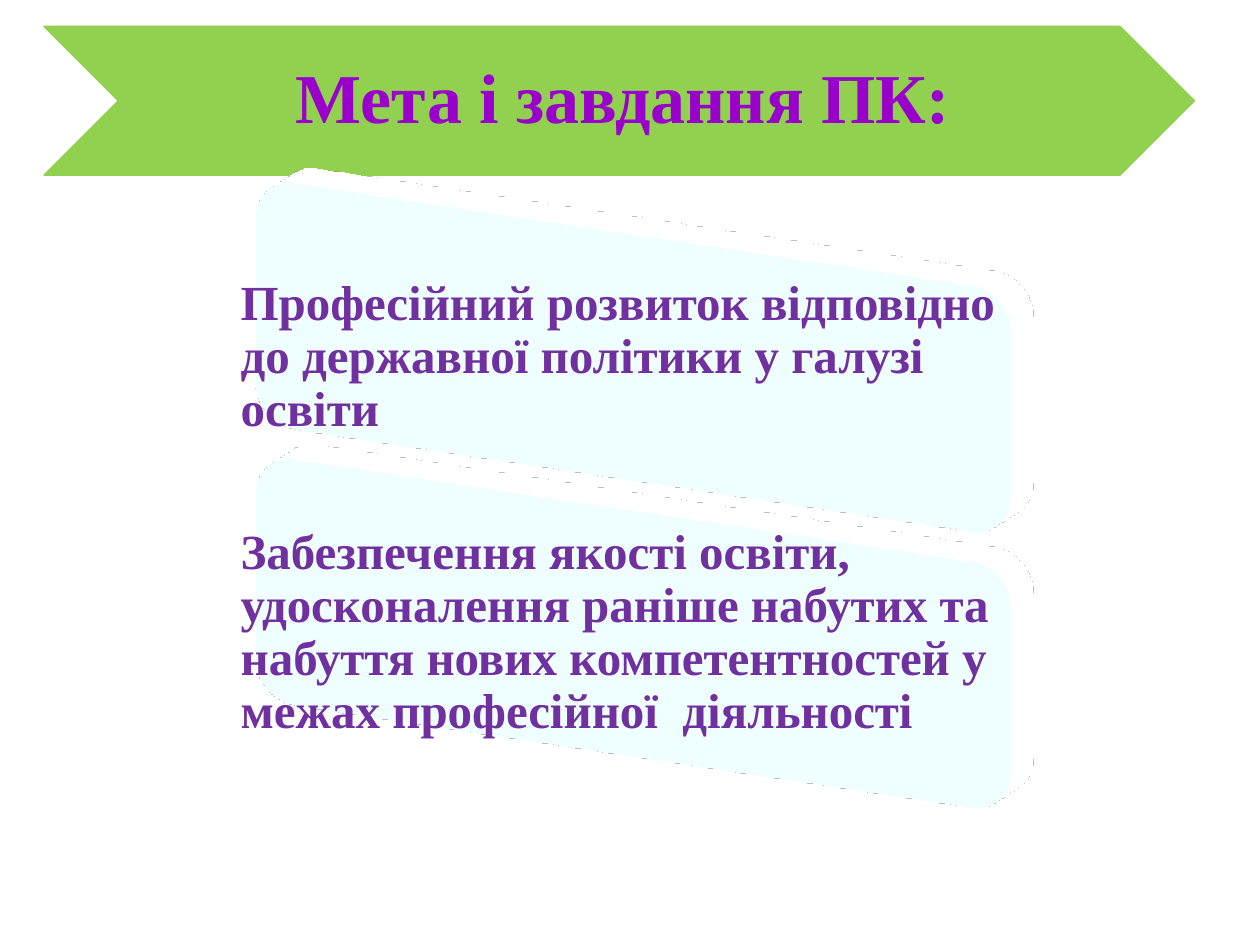
from lxml import etree
from pptx import Presentation
from pptx.dml.color import RGBColor
from pptx.enum.shapes import MSO_SHAPE as Shape
from pptx.enum.text import MSO_ANCHOR as Anchor, PP_ALIGN as Align
from pptx.oxml.ns import qn
from pptx.util import Inches, Pt

GREEN = RGBColor(0x92, 0xD0, 0x50)
VIOLET = RGBColor(0x99, 0x00, 0xCC)
PURPLE = RGBColor(0x70, 0x30, 0xA0)
PALE_BLUE = RGBColor(0xC6, 0xD9, 0xF1)
WHITE = RGBColor(0xFF, 0xFF, 0xFF)
FONT = "Times New Roman"

GOALS = [
    "Професійний розвиток відповідно до державної політики у галузі освіти",
    "Забезпечення якості освіти, удосконалення раніше набутих та набуття "
    "нових компетентностей у межах професійної  діяльності",
]


def write_text(shape, text, size, color, align, insets):
    """Fill a shape with one bold paragraph, centred vertically."""
    frame = shape.text_frame
    frame.word_wrap = True
    frame.vertical_anchor = Anchor.MIDDLE
    (frame.margin_left, frame.margin_top,
     frame.margin_right, frame.margin_bottom) = map(Inches, insets)
    para = frame.paragraphs[0]
    para.alignment = align
    para.line_spacing = 0.9
    span = para.add_run()
    span.text = text
    span.font.name = FONT
    span.font.size = Pt(size)
    span.font.bold = True
    span.font.color.rgb = color


def add_shape(page, kind, box, color):
    """Add a preset shape with a plain fill, no line and no shadow."""
    shape = page.shapes.add_shape(kind, *map(Inches, box))
    shape.fill.solid()
    shape.fill.fore_color.rgb = color
    shape.line.fill.background()
    shape.shadow.inherit = False
    return shape


def add_depth(shape):
    """Turn a shape into a matte slab seen from the left."""
    properties = shape._element.spPr
    scene = etree.SubElement(properties, qn("a:scene3d"))
    etree.SubElement(scene, qn("a:camera"),
                     prst="isometricOffAxis2Left", zoom="95000")
    etree.SubElement(scene, qn("a:lightRig"), rig="flat", dir="t")
    slab = etree.SubElement(properties, qn("a:sp3d"), extrusionH="381000",
                            contourW="38100", prstMaterial="matte")
    contour = etree.SubElement(slab, qn("a:contourClr"))
    etree.SubElement(contour, qn("a:srgbClr"), val=str(WHITE))


def add_header(page, box, text):
    """Place the chevron banner with the title on top of it."""
    left, top, width, height = box
    banner = add_shape(page, Shape.CHEVRON, box, GREEN)
    banner.line.color.rgb = GREEN
    banner.line.width = Pt(0.85)
    title = page.shapes.title
    title.left, title.top = Inches(left + height / 2), Inches(top)
    title.width, title.height = Inches(width - height), Inches(height)
    write_text(title, text, 40, VIOLET, Align.CENTER, (0.06, 0.03, 0, 0.03))
    banner._element.addnext(title._element)


def add_card(page, box, text):
    """Place a rounded slab with its text level across it."""
    add_depth(add_shape(page, Shape.ROUNDED_RECTANGLE, box, PALE_BLUE))
    left, top, width, height = box
    label = page.shapes.add_textbox(
        Inches(left + 0.1), Inches(top + 0.1),
        Inches(width - 0.2), Inches(height - 0.2))
    write_text(label, text, 28, PURPLE, Align.LEFT, (0.12,) * 4)


def main():
    """Build the slide and save it."""
    deck = Presentation()
    deck.slide_width, deck.slide_height = Inches(10), Inches(7.5)
    page = deck.slides.add_slide(deck.slide_layouts[5])
    add_header(page, (0.35, 0.21, 9.13, 1.18), "Мета і завдання ПК:")
    for index, goal in enumerate(GOALS):
        add_card(page, (1.69, 1.81 + 2.19 * index, 6.67, 2.05), goal)
    deck.save("out.pptx")


if __name__ == "__main__":
    main()
